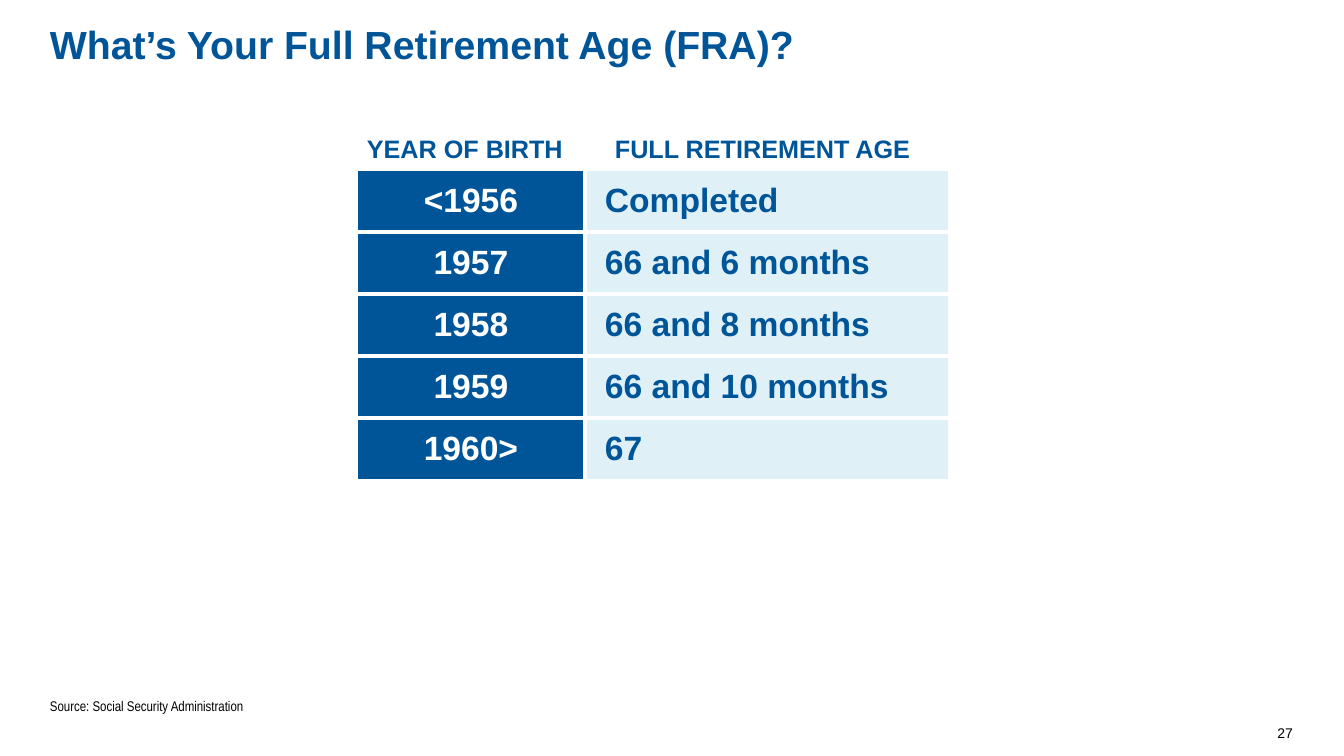
from lxml import etree
from pptx import Presentation
from pptx.dml.color import RGBColor
from pptx.enum.text import MSO_ANCHOR, PP_ALIGN
from pptx.oxml.ns import qn
from pptx.util import Pt

PX = 914400 / 100.8
BLUE = RGBColor(0x00, 0x55, 0x98)
PALE = RGBColor(0xDF, 0xF0, 0xF7)
WHITE = RGBColor(0xFF, 0xFF, 0xFF)
BLACK = RGBColor(0x00, 0x00, 0x00)
LEFT, CENTER, RIGHT = PP_ALIGN.LEFT, PP_ALIGN.CENTER, PP_ALIGN.RIGHT
TOP, MIDDLE, BOTTOM = MSO_ANCHOR.TOP, MSO_ANCHOR.MIDDLE, MSO_ANCHOR.BOTTOM


def px(length):
    return round(length * PX)


def write(para, text, size, color, bold=True, align=LEFT, face="Arial"):
    para.text = text
    para.alignment = align
    para.font.size = Pt(size)
    para.font.bold = bold
    para.font.name = face
    para.font.color.rgb = color


deck = Presentation()
deck.slide_width, deck.slide_height = px(1344), px(756)
page = deck.slides.add_slide(deck.slide_layouts[6])

# Title, source and page number: boxes without insets
plain_boxes = [
    ((50, 20, 958, 86), TOP,
     ("What’s Your Full Retirement Age (FRA)?", 28, BLUE)),
    ((50, 656, 1243, 58), BOTTOM,
     ("Source: Social Security Administration", 10, BLACK, False, LEFT, "Arial Narrow")),
    ((1253, 721, 40, 20), BOTTOM, ("27", 10, BLACK, False, RIGHT)),
]
for place, anchor, style in plain_boxes:
    frame = page.shapes.add_textbox(*map(px, place)).text_frame
    frame.word_wrap = True
    frame.vertical_anchor = anchor
    frame.margin_left = frame.margin_right = frame.margin_top = frame.margin_bottom = 0
    write(frame.paragraphs[0], *style)

# Column headings
for left, width, heading in [(357, 219, "YEAR OF BIRTH"), (605, 326, "FULL RETIREMENT AGE")]:
    frame = page.shapes.add_textbox(px(left), px(128), px(width), px(40)).text_frame
    frame.word_wrap = False
    write(frame.paragraphs[0], heading, 18, BLUE)

# Retirement ages by year of birth
ages = [
    ("<1956", "Completed"),
    ("1957", "66 and 6 months"),
    ("1958", "66 and 8 months"),
    ("1959", "66 and 10 months"),
    ("1960>", "67"),
]
ROW_HEIGHT = 62
column_widths = (228, 365)
column_styles = [(BLUE, WHITE, CENTER, 10), (PALE, BLUE, LEFT, 20)]
table = page.shapes.add_table(
    len(ages), 2, px(357), px(170), px(sum(column_widths)), px(ROW_HEIGHT * len(ages))
).table
table.first_row = table.horz_banding = False
for column, width in zip(table.columns, column_widths):
    column.width = px(width)

for row, texts in enumerate(ages):
    table.rows[row].height = px(ROW_HEIGHT)
    for col, (fill, color, align, inset) in enumerate(column_styles):
        cell = table.cell(row, col)
        cell.vertical_anchor = MIDDLE
        cell.margin_left = px(inset)
        write(cell.text_frame.paragraphs[0], texts[col], 24, color, align=align)
        borders = {
            "a:lnL": 1 if col == 0 else 3,
            "a:lnR": 3,
            "a:lnT": 1 if row == 0 else 3,
            "a:lnB": 1 if row == len(ages) - 1 else 3,
        }
        properties = cell._tc.get_or_add_tcPr()
        for side, points in borders.items():
            line = etree.SubElement(properties, qn(side), w=str(Pt(points)))
            solid = etree.SubElement(line, qn("a:solidFill"))
            etree.SubElement(solid, qn("a:srgbClr"), val=str(WHITE))
        cell.fill.solid()
        cell.fill.fore_color.rgb = fill

deck.save("out.pptx")
